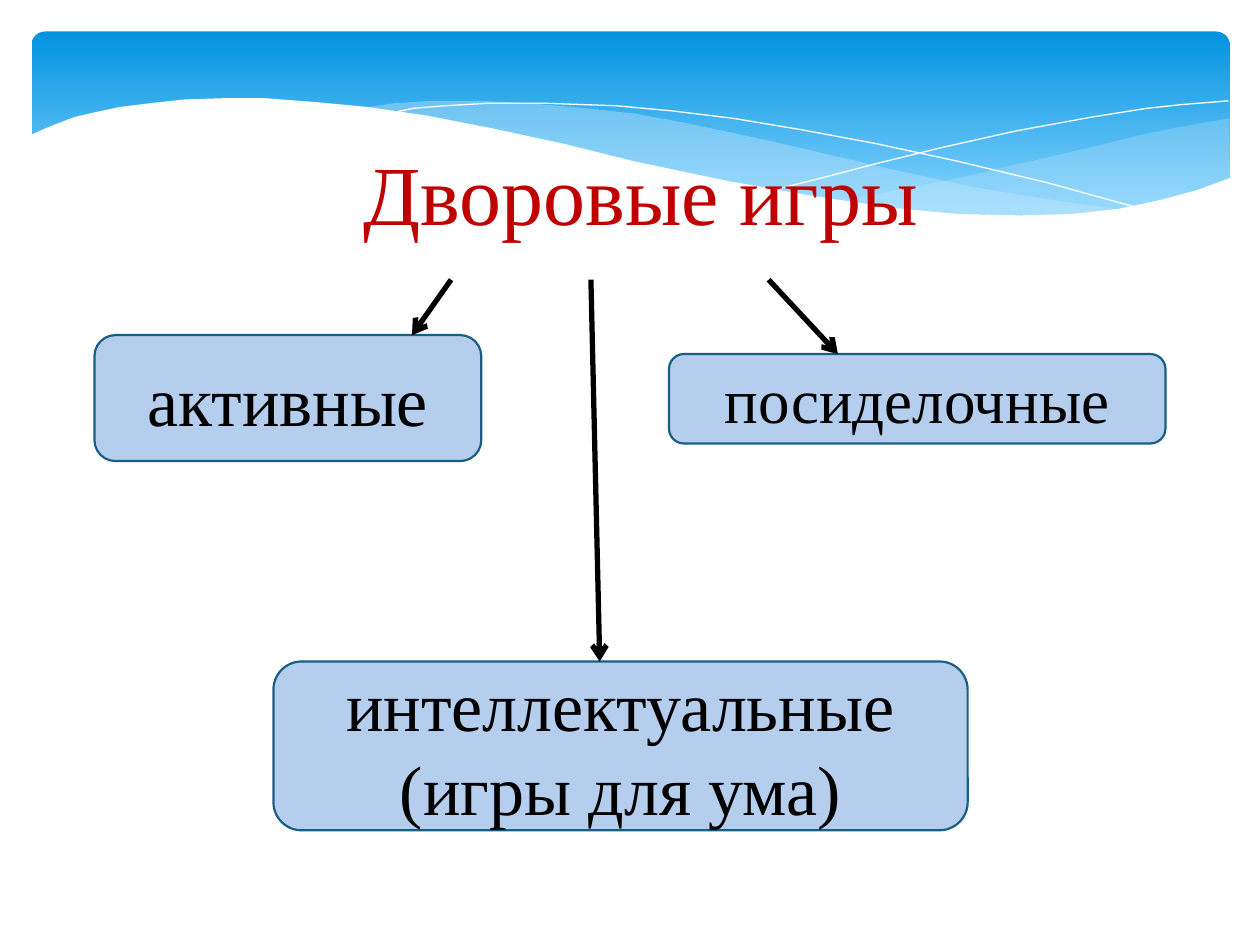
import dataclasses

import pptx
import pptx.dml.color
import pptx.enum.shapes
import pptx.enum.text
import pptx.oxml
import pptx.oxml.ns
import pptx.util

PX = 9144
MSO_SHAPE = pptx.enum.shapes.MSO_SHAPE
MSO_ANCHOR = pptx.enum.text.MSO_ANCHOR


@dataclasses.dataclass(frozen=True)
class Theme:
    font: str = "Times New Roman"
    title: str = "C00000"
    text: str = "000000"
    box: str = "B5CEED"
    border: str = "195F84"
    sky_top: str = "0293E0"
    sky_bottom: str = "83D3FE"
    wave: str = "C6E7FC"
    paper: str = "FFFFFF"
    title_size: int = 48
    label_size: int = 40
    small_size: int = 36
    border_width: float = 1.25
    arrow_width: int = 3


THEME = Theme()

RIGHT_WAVE = [
    (950, 69), (910, 76), (881, 82), (836, 93), (780, 106), (728, 118), (681, 127),
    (636, 135), (666, 139), (707, 143), (744, 146), (778, 147), (810, 147), (838, 145),
    (864, 141), (888, 137), (910, 131), (938, 122), (951, 116), (951, 69),
]
MIDDLE_WAVE = [
    (868, 142), (812, 134), (750, 124), (681, 109), (604, 91), (559, 81), (516, 72),
    (477, 65), (440, 61), (395, 57), (355, 55), (319, 55), (288, 57), (261, 61),
    (298, 65), (337, 72), (379, 81), (424, 91), (505, 110), (576, 125), (625, 133),
    (670, 140), (711, 144), (748, 147), (782, 148), (813, 147), (842, 145),
]
FALLING_LINE = [
    (284, 65), (303, 61), (328, 59), (362, 57), (408, 57), (464, 59), (508, 63),
    (557, 69), (611, 78), (670, 89), (735, 103), (806, 120), (882, 141),
]
RISING_LINE = [
    (588, 126), (628, 116), (670, 105), (723, 92), (781, 79), (841, 68), (885, 61),
    (913, 58), (950, 55),
]
PAPER_EDGE = [
    (952, 116), (925, 126), (895, 134), (862, 141), (825, 145), (784, 146), (736, 145),
    (683, 140), (623, 131), (554, 119), (478, 103), (422, 89), (366, 77), (315, 67),
    (267, 60), (225, 56), (186, 53), (152, 53), (121, 54), (94, 57), (70, 60), (51, 64),
    (34, 68), (21, 73), (11, 77), (0, 82), (-2, 82), (-2, 199), (952, 199),
]


def rgb(value):
    return pptx.dml.color.RGBColor.from_string(value)


def emu(*lengths):
    return [length * PX for length in lengths]


def set_attrs(obj, values):
    for name, value in values.items():
        setattr(obj, name, value)


def add_outline(slide, box, points, closed):
    builder = slide.shapes.build_freeform(*points[0], scale=PX)
    builder.add_line_segments(points[1:], close=closed)
    sp = builder.convert_to_shape(*emu(*box[:2]))
    sp.shadow.inherit = False
    return sp


def add_wave(slide, box, points, color, alpha=100):
    sp = add_outline(slide, box, points, True)
    sp.fill.solid()
    sp.fill.fore_color.rgb = rgb(color)
    sp.line.fill.background()
    if alpha < 100:
        clr = sp.fill._xPr.find(".//" + pptx.oxml.ns.qn("a:srgbClr"))
        clr.append(pptx.oxml.parse_xml(
            f'<a:alpha {pptx.oxml.ns.nsdecls("a")} val="{alpha * 1000}"/>'))


def add_hairline(slide, box, points):
    sp = add_outline(slide, box, points, False)
    sp.fill.background()
    sp.line.color.rgb = rgb(THEME.paper)
    sp.line.width = 0


def add_header(slide, box):
    sp = slide.shapes.add_shape(MSO_SHAPE.ROUNDED_RECTANGLE, *emu(*box))
    sp.shadow.inherit = False
    sp.adjustments[0] = 0.07
    sp.line.fill.background()
    sp.fill.gradient()
    sp.fill.gradient_angle = 270
    stops = zip(sp.fill.gradient_stops, (0, 0.9), (THEME.sky_top, THEME.sky_bottom))
    for stop, position, color in stops:
        stop.position = position
        stop.color.rgb = rgb(color)
    add_wave(slide, box, RIGHT_WAVE, THEME.wave, 29)
    add_wave(slide, box, MIDDLE_WAVE, THEME.wave, 40)
    add_hairline(slide, box, FALLING_LINE)
    add_hairline(slide, box, RISING_LINE)
    add_wave(slide, box, PAPER_EDGE, THEME.paper)


def write_text(sp, lines, size, color, anchor):
    tf = sp.text_frame
    set_attrs(tf, {"word_wrap": True, "vertical_anchor": anchor})
    for i, line in enumerate(lines):
        p = tf.add_paragraph() if i else tf.paragraphs[0]
        p.alignment = pptx.enum.text.PP_ALIGN.CENTER
        r = p.add_run()
        r.text = line
        set_attrs(r.font, {"name": THEME.font, "size": pptx.util.Pt(size)})
        r.font.color.rgb = rgb(color)


def add_title(slide, box, text):
    sp = slide.shapes.add_textbox(*emu(*box))
    write_text(sp, [text], THEME.title_size, THEME.title, MSO_ANCHOR.TOP)


def add_game_box(slide, box, lines, size):
    sp = slide.shapes.add_shape(MSO_SHAPE.ROUNDED_RECTANGLE, *emu(*box))
    sp.shadow.inherit = False
    sp.fill.solid()
    sp.fill.fore_color.rgb = rgb(THEME.box)
    sp.line.color.rgb = rgb(THEME.border)
    sp.line.width = pptx.util.Pt(THEME.border_width)
    write_text(sp, lines, size, THEME.text, MSO_ANCHOR.MIDDLE)


def add_arrow(slide, start, end):
    cx = slide.shapes.add_connector(
        pptx.enum.shapes.MSO_CONNECTOR.STRAIGHT, *emu(*start, *end))
    cx.line.color.rgb = rgb(THEME.text)
    cx.line.width = pptx.util.Pt(THEME.arrow_width)
    ns = pptx.oxml.ns.nsdecls("a")
    cx.line._get_or_add_ln().append(
        pptx.oxml.parse_xml(f'<a:tailEnd {ns} type="arrow"/>'))
    cx._element.spPr.append(pptx.oxml.parse_xml(f"<a:effectLst {ns}/>"))


def main():
    prs = pptx.Presentation()
    set_attrs(prs, {"slide_width": 1000 * PX, "slide_height": 750 * PX})
    slide = prs.slides.add_slide(prs.slide_layouts[6])
    add_header(slide, (25, 25, 951, 156))
    add_title(slide, (217, 107, 583, 91), "Дворовые игры")
    games = [
        ((75, 266, 307, 100), ["активные"], THEME.label_size),
        ((531, 281, 394, 71), ["посиделочные"], THEME.small_size),
        ((217, 525, 551, 134), ["интеллектуальные", "(игры для ума)"], THEME.label_size),
    ]
    for box, lines, size in games:
        add_game_box(slide, box, lines, size)
    arrow_top = 222
    for x, end in [(358, (327, 266)), (610, (665, 281)), (469, (476, 525))]:
        add_arrow(slide, (x, arrow_top), end)
    prs.save("out.pptx")


if __name__ == "__main__":
    main()
